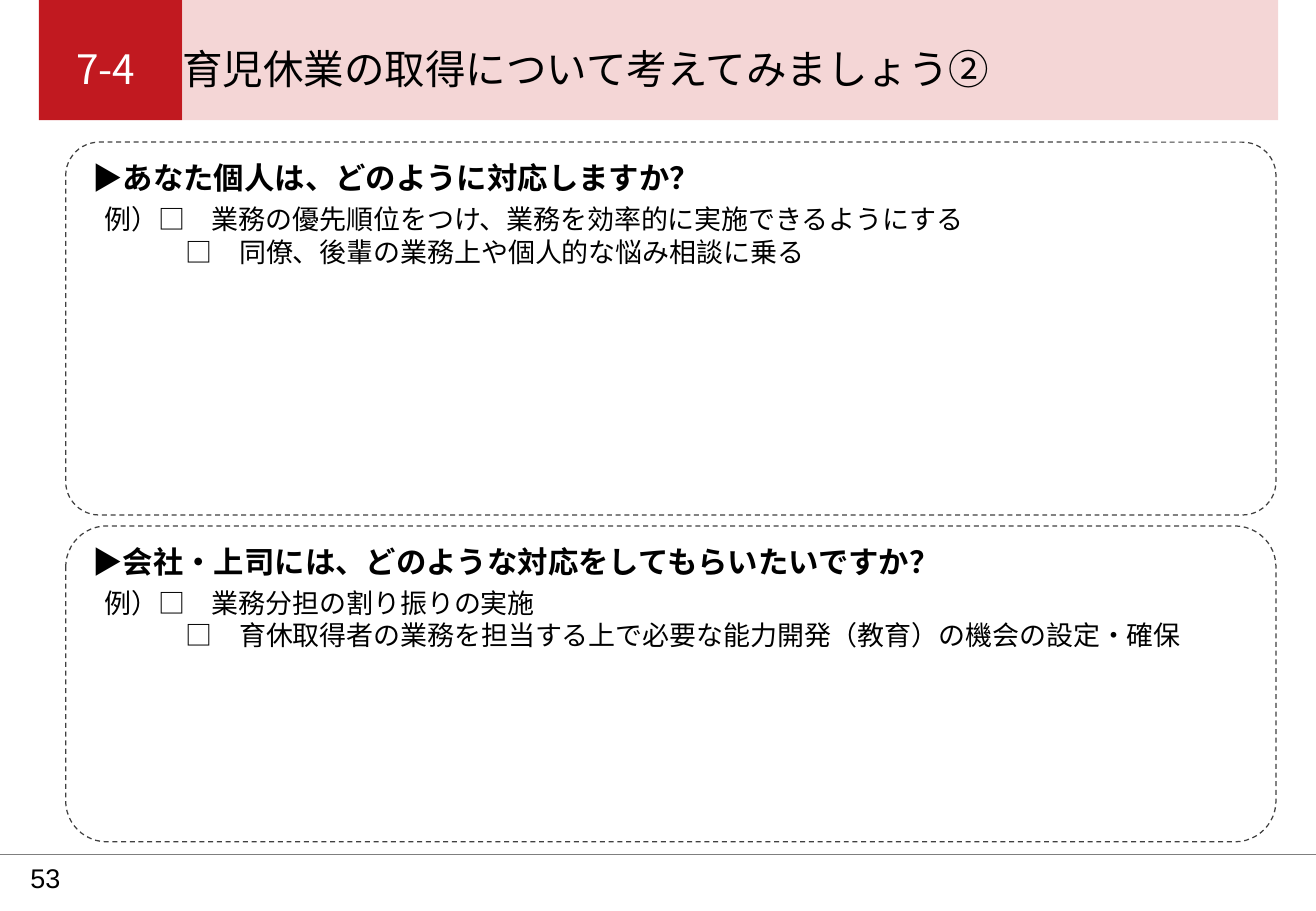
import pptx
import pptx.util
import pptx.dml.color
import pptx.enum.dml
import pptx.enum.shapes
import pptx.enum.text
import pptx.oxml
import pptx.oxml.ns

Pt = pptx.util.Pt
RGBColor = pptx.dml.color.RGBColor
Shape = pptx.enum.shapes.MSO_SHAPE
Anchor = pptx.enum.text.MSO_ANCHOR
qn = pptx.oxml.ns.qn

WIDTH = pptx.util.Inches(10.83)
HEIGHT = pptx.util.Inches(7.5)
BLACK = RGBColor(0x00, 0x00, 0x00)
WHITE = RGBColor(0xFF, 0xFF, 0xFF)
RED = RGBColor(0xC1, 0x19, 0x20)
BAND_RED = RGBColor(0xC0, 0x00, 0x00)
DASH_GRAY = RGBColor(0x40, 0x40, 0x40)
RULE_GRAY = RGBColor(0x7F, 0x7F, 0x7F)
JAPANESE = "Noto Sans CJK JP"


def share(left, top, width, height):
    return (int(WIDTH * left / 100), int(HEIGHT * top / 100),
            int(WIDTH * width / 100), int(HEIGHT * height / 100))


def add_child(parent, tag, **attributes):
    child = pptx.oxml.parse_xml(f'<a:{tag} {pptx.oxml.ns.nsdecls("a")}/>')
    for key, value in attributes.items():
        child.set(key, str(value))
    parent.append(child)
    return child


def set_font(para, size, name=JAPANESE, bold=False):
    font = para.font
    font.size, font.bold, font.name = Pt(size), bold, name
    font.color.rgb = BLACK
    add_child(para._p.pPr.find(qn("a:defRPr")), "ea", typeface=name)


def add_text_box(page, box, insets, anchor=Anchor.TOP):
    frame = page.shapes.add_textbox(*share(*box)).text_frame
    frame.word_wrap = True
    frame.vertical_anchor = anchor
    (frame.margin_left, frame.margin_top,
     frame.margin_right, frame.margin_bottom) = map(pptx.util.Inches, insets)
    return frame


def add_block(page, box, color):
    block = page.shapes.add_shape(Shape.RECTANGLE, *share(*box))
    block.shadow.inherit = False
    block.fill.solid()
    block.fill.fore_color.rgb = color
    block.line.fill.background()
    return block


def add_header(page, box, number, title):
    left, top, width, height = box
    number_width = 10.9
    add_block(page, (left, top, number_width, height), RED)
    band = add_block(page, (left + number_width, top, width - number_width, height), BAND_RED)
    color = band.fill._xPr.find(qn("a:solidFill"))[0]
    add_child(color, "alpha", val=16000)

    text_left = left + 2.85
    frame = add_text_box(page, (text_left, top + 4.8, 95, 9.5), (0, 0, 0, 0.06))
    para = frame.paragraphs[0]
    tabs = add_child(para._p.get_or_add_pPr(), "tabLst")
    tab_position = int(WIDTH * (left + number_width - text_left) / 100)
    add_child(tabs, "tab", pos=tab_position, algn="l")
    set_font(para, 24)
    for text, text_color in ((number + "\t", WHITE), (title, BLACK)):
        span = para.add_run()
        span.text = text
        span.font.color.rgb = text_color


def add_panel(page, box, radius, question, examples):
    left, top, width, height = box
    panel = page.shapes.add_shape(Shape.ROUNDED_RECTANGLE, *share(*box))
    panel.shadow.inherit = False
    panel.adjustments[0] = radius
    panel.fill.background()
    panel.line.color.rgb = DASH_GRAY
    panel.line.width = Pt(0.75)
    panel.line.dash_style = pptx.enum.dml.MSO_LINE.DASH

    text_left = left + 2.03
    frame = add_text_box(page, (text_left, top + 1.1, width, 17.33), (0, 0.06, 0, 0.06))
    frame.text = question
    set_font(frame.paragraphs[0], 18, bold=True)

    frame = add_text_box(page, (text_left, top + 6, 84.86, 8.53), (0.1, 0.05, 0.1, 0.05))
    frame.text = "\n".join(examples)
    for para in frame.paragraphs:
        set_font(para, 16)
    for para in frame.paragraphs[1:]:
        properties = para._p.get_or_add_pPr()
        properties.set("marL", str(Pt(3 * 16)))
        properties.set("indent", "0")


def add_footer(page, top, number):
    start_x, y, length, _ = share(0, top, 100, 0)
    rule = page.shapes.add_connector(
        pptx.enum.shapes.MSO_CONNECTOR.STRAIGHT, start_x, y, length, y)
    rule.line.color.rgb = RULE_GRAY
    rule.line.width = Pt(0.25)
    add_child(rule._element.spPr, "effectLst")
    frame = add_text_box(page, (2.3, top, 4.43, 5.2), (0, 0.05, 0, 0.05), Anchor.MIDDLE)
    frame.text = number
    set_font(frame.paragraphs[0], 16, "Arial")


def main():
    deck = pptx.Presentation()
    deck.slide_width, deck.slide_height = WIDTH, HEIGHT
    page = deck.slides.add_slide(deck.slide_layouts[6])
    add_footer(page, 93.73, "53")
    add_header(page, (2.95, 0, 94.18, 13.2), "7-4", "育児休業の取得について考えてみましょう②")
    add_panel(page, (4.99, 15.6, 91.97, 40.93), 0.09,
              "▶︎あなた個人は、どのように対応しますか？",
              ["例）□　業務の優先順位をつけ、業務を効率的に実施できるようにする",
               "□　同僚、後輩の業務上や個人的な悩み相談に乗る"])
    add_panel(page, (4.99, 57.73, 91.97, 34.67), 0.13,
              "▶︎会社・上司には、どのような対応をしてもらいたいですか？",
              ["例）□　業務分担の割り振りの実施",
               "□　育休取得者の業務を担当する上で必要な能力開発（教育）の機会の設定・確保"])
    deck.save("out.pptx")


if __name__ == "__main__":
    main()
